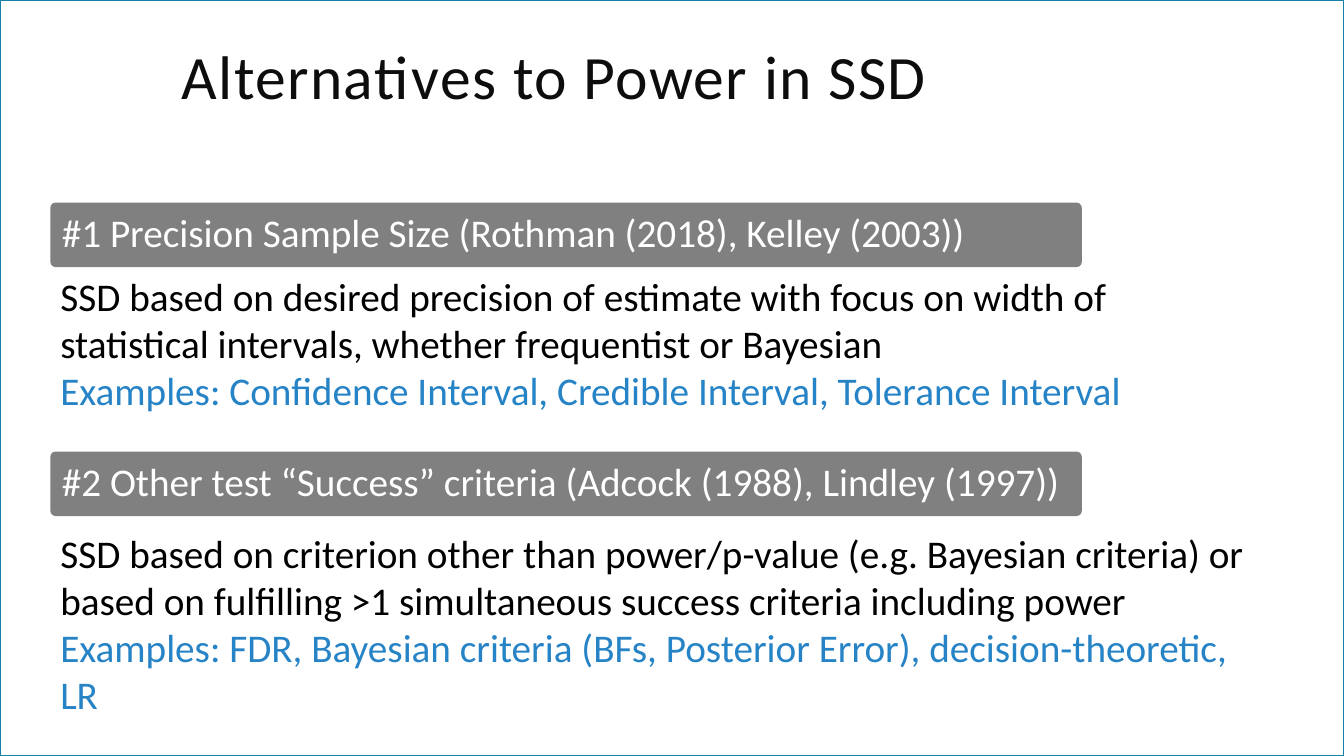
from dataclasses import dataclass

from pptx import Presentation
from pptx.dml.color import RGBColor
from pptx.enum.shapes import MSO_SHAPE as Shape
from pptx.enum.text import MSO_ANCHOR as Anchor, MSO_AUTO_SIZE as AutoSize, PP_ALIGN as Align
from pptx.util import Inches, Pt


@dataclass(frozen=True)
class Theme:
    font: str = "Calibri"
    title_size: int = 44
    text_size: int = 28
    frame: str = "1580A9"
    title: str = "0D0D0D"
    banner: str = "808080"
    banner_text: str = "FFFFFF"
    text: str = "000000"
    examples: str = "2683C6"


THEME = Theme()
SLIDE_WIDTH, SLIDE_HEIGHT = 13.33, 7.5
LEFT = 0.5
BANNER_WIDTH, BANNER_HEIGHT = 10.23, 0.64
BODY_WIDTH, BODY_HEIGHT = 11.97, 1.51

# Banner top, body top, heading, description, examples
ALTERNATIVES = [
    (2.01, 2.65,
     "#1 Precision Sample Size (Rothman (2018), Kelley (2003))",
     "SSD based on desired precision of estimate with focus on width of "
     "statistical intervals, whether frequentist or Bayesian",
     "Examples: Confidence Interval, Credible Interval, Tolerance Interval"),
    (4.48, 5.2,
     "#2 Other test “Success” criteria (Adcock (1988), Lindley (1997))",
     "SSD based on criterion other than power/p-value (e.g. Bayesian criteria) or "
     "based on fulfilling >1 simultaneous success criteria including power",
     "Examples: FDR, Bayesian criteria (BFs, Posterior Error), decision-theoretic, LR"),
]


def style(paragraph, size, color, align=Align.LEFT, line_spacing=1.0):
    paragraph.alignment = align
    paragraph.line_spacing = line_spacing
    for run in paragraph.runs:
        run.font.name = THEME.font
        run.font.size = Pt(size)
        run.font.color.rgb = RGBColor.from_string(color)


def add_frame(slide, left, top, width, height):
    frame = slide.shapes.add_shape(
        Shape.RECTANGLE, Inches(left), Inches(top), Inches(width), Inches(height))
    frame.shadow.inherit = False
    frame.fill.background()
    frame.line.color.rgb = RGBColor.from_string(THEME.frame)
    frame.line.width = Pt(1.25)


def place_title(slide, left, top, width, height):
    title = slide.shapes.title
    title.left, title.top = Inches(left), Inches(top)
    title.width, title.height = Inches(width), Inches(height)
    title.text_frame.text = "Alternatives to Power in SSD"
    title.text_frame.vertical_anchor = Anchor.MIDDLE
    title.text_frame.auto_size = AutoSize.NONE
    heading = title.text_frame.paragraphs[0]
    style(heading, THEME.title_size, THEME.title, Align.CENTER, 0.8)
    heading.runs[0].font._element.set("spc", "100")


def add_banner(slide, left, top, width, height, heading):
    banner = slide.shapes.add_shape(
        Shape.ROUNDED_RECTANGLE, Inches(left), Inches(top), Inches(width), Inches(height))
    banner.adjustments[0] = 0.08
    banner.shadow.inherit = False
    banner.fill.solid()
    banner.fill.fore_color.rgb = RGBColor.from_string(THEME.banner)
    banner.line.fill.background()
    banner.text_frame.text = heading
    banner.text_frame.vertical_anchor = Anchor.MIDDLE
    style(banner.text_frame.paragraphs[0], THEME.text_size, THEME.banner_text, line_spacing=0.9)


def add_body(slide, left, top, width, height, description, examples):
    body = slide.shapes.add_textbox(
        Inches(left), Inches(top), Inches(width), Inches(height)).text_frame
    body.word_wrap = True
    body.auto_size = AutoSize.SHAPE_TO_FIT_TEXT
    body.text = f"{description}\n{examples}"
    for paragraph, color in zip(body.paragraphs, (THEME.text, THEME.examples)):
        style(paragraph, THEME.text_size, color)


def main():
    deck = Presentation()
    deck.slide_width, deck.slide_height = Inches(SLIDE_WIDTH), Inches(SLIDE_HEIGHT)
    slide = deck.slides.add_slide(deck.slide_layouts.get_by_name("Title Only"))
    add_frame(slide, 0, 0, SLIDE_WIDTH, SLIDE_HEIGHT)
    place_title(slide, LEFT, 0.35, 10, 0.93)
    for banner_top, body_top, heading, description, examples in ALTERNATIVES:
        add_banner(slide, LEFT, banner_top, BANNER_WIDTH, BANNER_HEIGHT, heading)
        add_body(slide, LEFT, body_top, BODY_WIDTH, BODY_HEIGHT, description, examples)
    deck.save("out.pptx")


if __name__ == "__main__":
    main()
